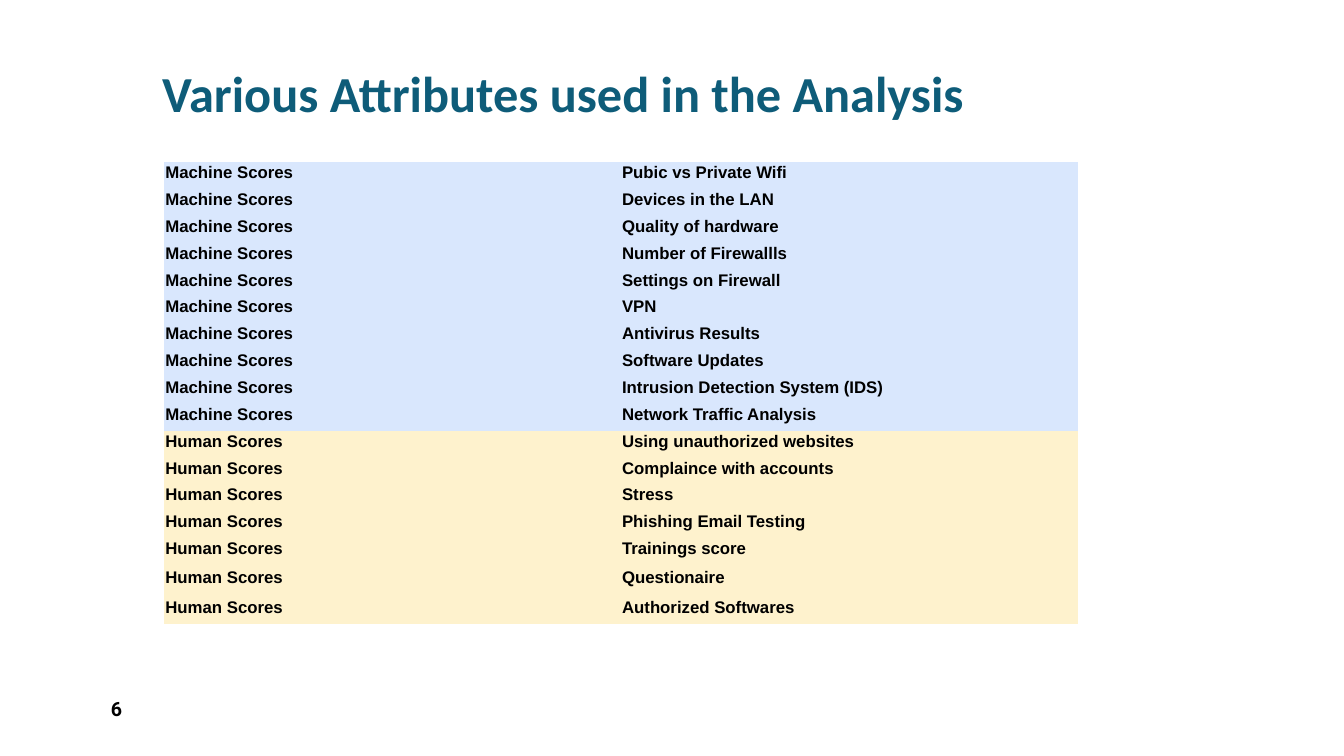
import pptx
import pptx.dml.color
import pptx.enum.text
import pptx.oxml.ns
import pptx.util
from lxml import etree

Inches = pptx.util.Inches
Anchor = pptx.enum.text.MSO_ANCHOR

TEAL = pptx.dml.color.RGBColor(0x0E, 0x5C, 0x79)
BLACK = pptx.dml.color.RGBColor(0x00, 0x00, 0x00)
PALE_BLUE = pptx.dml.color.RGBColor(0xD9, 0xE7, 0xFD)
PALE_YELLOW = pptx.dml.color.RGBColor(0xFE, 0xF2, 0xCD)

ROW_HEIGHT = 0.26
TALL_ROW_HEIGHT = 0.29
TALL_ROWS = ("Questionaire", "Authorized Softwares")

SCORE_GROUPS = [
    ("Machine Scores", PALE_BLUE, [
        "Pubic vs Private Wifi",
        "Devices in the LAN",
        "Quality of hardware",
        "Number of Firewallls",
        "Settings on Firewall",
        "VPN",
        "Antivirus Results",
        "Software Updates",
        "Intrusion Detection System (IDS)",
        "Network Traffic Analysis",
    ]),
    ("Human Scores", PALE_YELLOW, [
        "Using unauthorized websites",
        "Complaince with accounts",
        "Stress",
        "Phishing Email Testing",
        "Trainings score",
        "Questionaire",
        "Authorized Softwares",
    ]),
]


def write_text(text_frame, text, font_name="Arial", size=12, color=BLACK, bold=True):
    run = text_frame.paragraphs[0].add_run()
    run.text = text
    run.font.name = font_name
    run.font.size = pptx.util.Pt(size)
    run.font.color.rgb = color
    run.font.bold = bold


def add_label(slide, box, text, anchor=Anchor.TOP, **text_format):
    shape = slide.shapes.add_textbox(*map(Inches, box))
    shape.text_frame.word_wrap = True
    shape.text_frame.vertical_anchor = anchor
    write_text(shape.text_frame, text, **text_format)


def remove_borders(cell):
    properties = cell._tc.get_or_add_tcPr()
    for index, side in enumerate(("a:lnL", "a:lnR", "a:lnT", "a:lnB")):
        line = etree.Element(pptx.oxml.ns.qn(side))
        etree.SubElement(line, pptx.oxml.ns.qn("a:noFill"))
        properties.insert(index, line)


def fill_cell(cell, text, color):
    cell.margin_left = cell.margin_right = cell.margin_top = Inches(0.01)
    cell.margin_bottom = Inches(0.07)
    cell.vertical_anchor = Anchor.BOTTOM
    cell.fill.solid()
    cell.fill.fore_color.rgb = color
    remove_borders(cell)
    write_text(cell.text_frame, text)


def add_attribute_table(slide, left, top, width):
    entries = [
        (group, attribute, color)
        for group, color, attributes in SCORE_GROUPS
        for attribute in attributes
    ]
    table = slide.shapes.add_table(
        len(entries), 2, Inches(left), Inches(top),
        Inches(width), Inches(ROW_HEIGHT * len(entries)),
    ).table
    table.first_row = False
    table.horz_banding = False
    for row, (group, attribute, color) in zip(table.rows, entries):
        row.height = Inches(TALL_ROW_HEIGHT if attribute in TALL_ROWS else ROW_HEIGHT)
        for cell, text in zip(row.cells, (group, attribute)):
            fill_cell(cell, text, color)


def main():
    presentation = pptx.Presentation()
    presentation.slide_width = Inches(13.33)
    presentation.slide_height = Inches(7.5)
    slide = presentation.slides.add_slide(presentation.slide_layouts[6])
    add_attribute_table(slide, 1.63, 1.61, 9.06)
    add_label(slide, (1, 6.83, 2.92, 0.4), "6", Anchor.MIDDLE,
              font_name="Roboto", size=14)
    add_label(slide, (1.51, 0.57, 9.21, 0.71), "Various Attributes used in the Analysis",
              font_name="Calibri", size=36, color=TEAL)
    presentation.save("out.pptx")


if __name__ == "__main__":
    main()
